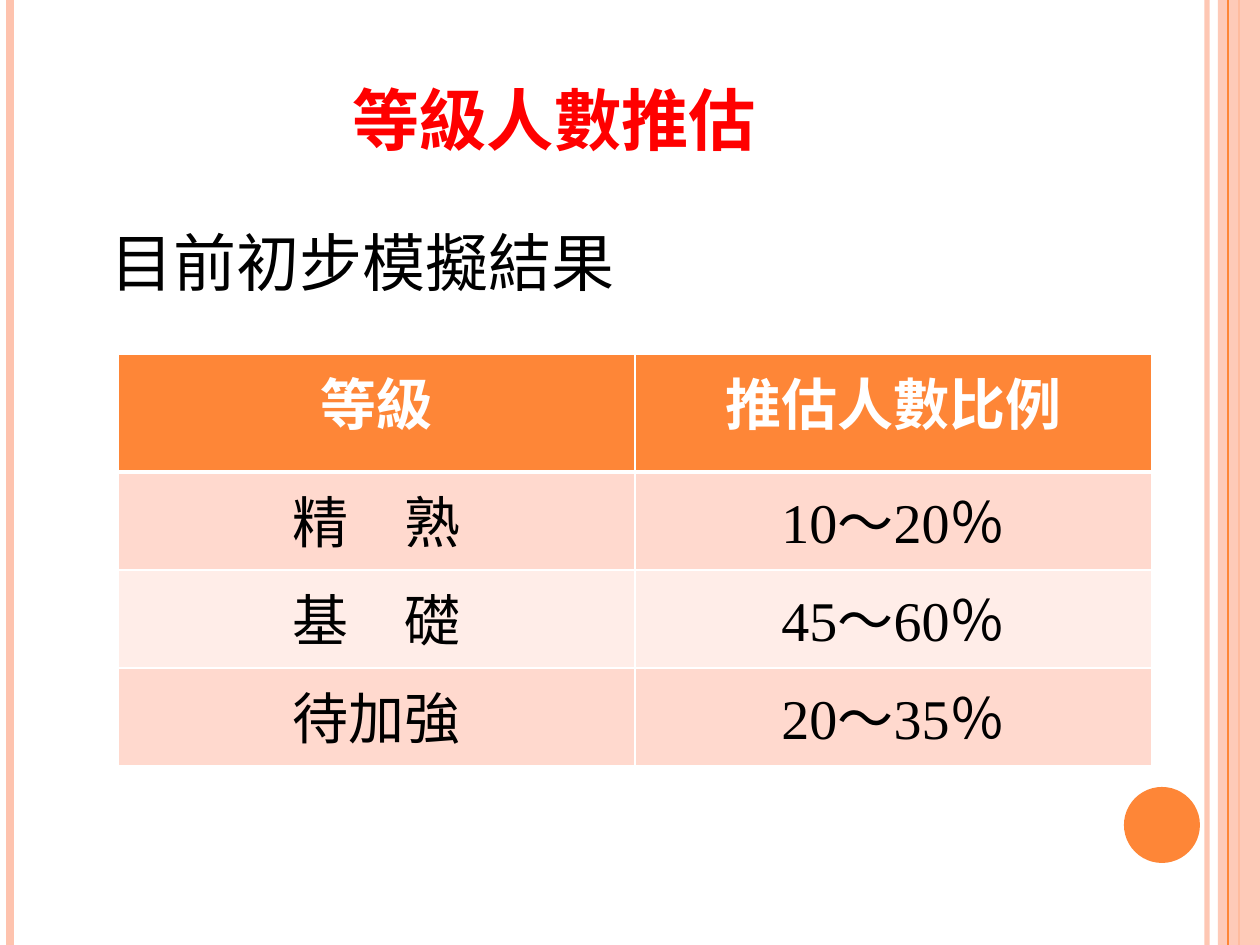
import pptx
import pptx.util
import pptx.dml.color
import pptx.enum.shapes
import pptx.enum.text
import pptx.oxml
import pptx.oxml.ns

PX = 914400 / 126
SLIDE_W, SLIDE_H = 1260, 945
COLORS = {
    "orange": "FE8637", "peach": "FEC3AE", "title": "FF0000", "black": "000000",
    "white": "FFFFFF", "band_dark": "FFD9CE", "band_light": "FFEDE8",
}
SANS, SERIF = "Noto Sans CJK SC", "Times New Roman"
ROWS = [
    ("等級", "推估人數比例"),
    ("精　熟", "10～20％"),
    ("基　礎", "45～60％"),
    ("待加強", "20～35％"),
]


def px(*lengths):
    return [round(length * PX) for length in lengths]


def rgb(name):
    return pptx.dml.color.RGBColor.from_string(COLORS[name])


def paint(fill, color, opacity=100):
    fill.solid()
    fill.fore_color.rgb = rgb(color)
    if opacity < 100:
        srgb = fill._xPr.find(".//" + pptx.oxml.ns.qn("a:srgbClr"))
        pptx.oxml.ns  # namespace helpers come with the package
        alpha = srgb.makeelement(pptx.oxml.ns.qn("a:alpha"), {"val": str(opacity * 1000)})
        srgb.append(alpha)


def write(frame, text, color, latin=SANS, align="LEFT", small_caps=False, **font_values):
    paragraph = frame.paragraphs[0]
    paragraph.alignment = getattr(pptx.enum.text.PP_ALIGN, align)
    run = paragraph.add_run()
    run.text = text
    run.font.color.rgb = rgb(color)
    for name, value in {"name": latin, **font_values}.items():
        setattr(run.font, name, value)
    properties = run._r.get_or_add_rPr()
    if small_caps:
        properties.set("cap", "small")
    east_asian = properties.makeelement(pptx.oxml.ns.qn("a:ea"), {"typeface": SANS})
    properties.find(pptx.oxml.ns.qn("a:latin")).addnext(east_asian)
    return paragraph


def add_stripe(slide, x, color, points, opacity=100):
    stripe = slide.shapes.add_connector(
        pptx.enum.shapes.MSO_CONNECTOR.STRAIGHT, *px(x, 0, x, SLIDE_H))
    stripe.line.width = pptx.util.Pt(points)
    paint(stripe.line.fill, color, opacity)
    properties = stripe._element.spPr
    properties.append(properties.makeelement(pptx.oxml.ns.qn("a:effectLst"), {}))


def add_panel(slide, kind, box, color, opacity=100):
    panel = slide.shapes.add_shape(
        getattr(pptx.enum.shapes.MSO_SHAPE, kind), *px(*box))
    panel.shadow.inherit = False
    panel.line.fill.background()
    paint(panel.fill, color, opacity)


def add_decoration(slide):
    # Edge stripes, right band and page disc
    add_stripe(slide, 1207, "peach", 3, 93)
    add_stripe(slide, 10, "peach", 4.5)
    add_stripe(slide, 1239, "orange", 1.5)
    add_panel(slide, "RECTANGLE", (1218, 0, SLIDE_W - 1218, SLIDE_H), "peach", 87)
    add_stripe(slide, 1228, "orange", 0.75)
    add_panel(slide, "OVAL", (1124, 787, 76, 76), "orange")


def add_text(slide, box, anchor, text, color, **style):
    frame = slide.shapes.add_textbox(*px(*box)).text_frame
    frame.word_wrap = True
    frame.vertical_anchor = getattr(pptx.enum.text.MSO_ANCHOR, anchor)
    return write(frame, text, color, **style)


def set_borders(cell, widths):
    properties = cell._tc.get_or_add_tcPr()
    for position, (side, points) in enumerate(widths.items()):
        border = pptx.oxml.parse_xml(
            f'<a:ln{side} {pptx.oxml.ns.nsdecls("a")} w="{pptx.util.Pt(points)}">'
            f'<a:solidFill><a:srgbClr val="{COLORS["white"]}"/></a:solidFill></a:ln{side}>')
        properties.insert(position, border)


def add_ratio_table(slide, box, header_height):
    left, top, width, height = box
    table = slide.shapes.add_table(len(ROWS), 2, *px(*box)).table
    row_height = (height - header_height) // (len(ROWS) - 1)
    for column in table.columns:
        column.width = px(width // 2)[0]
    for r, texts in enumerate(ROWS):
        header = r == 0
        table.rows[r].height = px(header_height if header else row_height)[0]
        band = "orange" if header else ("band_light", "band_dark")[r % 2]
        for c, text in enumerate(texts):
            cell = table.cell(r, c)
            paint(cell.fill, band)
            set_borders(cell, {"L": 1, "R": 1, "T": 3 if r == 1 else 1, "B": 3 if header else 1})
            write(cell.text_frame, text, "white" if header else "black", latin=SERIF,
                  align="CENTER", size=pptx.util.Pt(32), bold=header)


def main():
    deck = pptx.Presentation()
    deck.slide_width, deck.slide_height = px(SLIDE_W, SLIDE_H)
    slide = deck.slides.add_slide(deck.slide_layouts[6])

    add_decoration(slide)
    # Title and lead line
    add_text(slide, (118, 49, 872, 120), "BOTTOM", "等級人數推估", "title", align="CENTER",
             small_caps=True, size=pptx.util.Pt(48), bold=True)
    lead = add_text(slide, (98, 217, 1074, 110), "TOP", "目前初步模擬結果", "black",
                    size=pptx.util.Pt(36))
    lead.space_before = pptx.util.Pt(6)
    # Estimated share of each level
    add_ratio_table(slide, (118, 354, 1034, 412), 118)

    deck.save("out.pptx")


if __name__ == "__main__":
    main()
